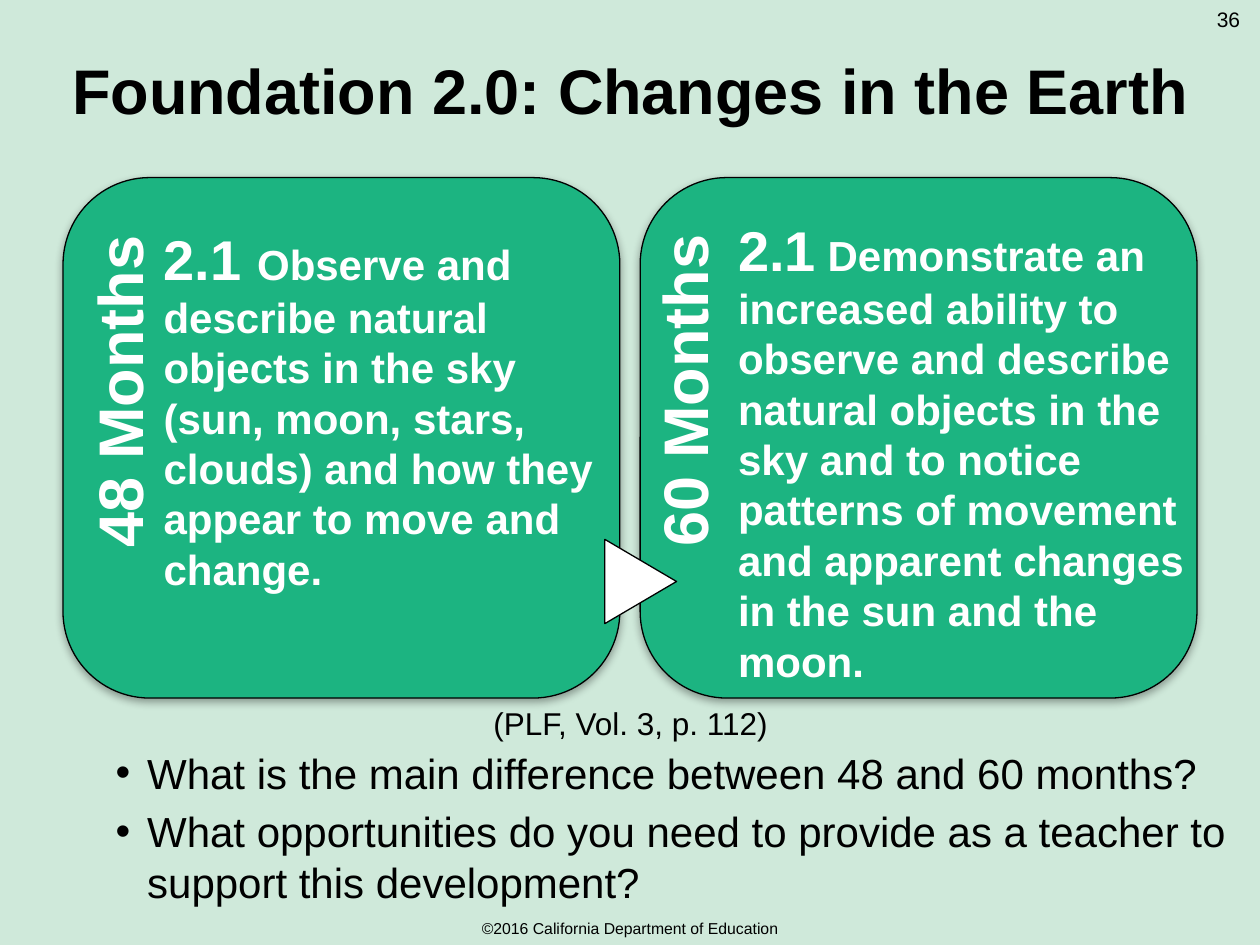
from lxml import etree
from pptx import Presentation
from pptx.dml.color import RGBColor
from pptx.enum.shapes import MSO_SHAPE
from pptx.enum.text import MSO_ANCHOR, PP_ALIGN
from pptx.oxml.ns import qn
from pptx.util import Pt

LEFT, CENTER, RIGHT = PP_ALIGN.LEFT, PP_ALIGN.CENTER, PP_ALIGN.RIGHT
TOP, MIDDLE, BOTTOM = MSO_ANCHOR.TOP, MSO_ANCHOR.MIDDLE, MSO_ANCHOR.BOTTOM
ROUNDED = MSO_SHAPE.ROUNDED_RECTANGLE
TRIANGLE = MSO_SHAPE.FLOWCHART_EXTRACT
BLACK, WHITE, GREEN, MINT = "000000", "FFFFFF", "1CB481", "CFE9DA"


def color(value):
    return RGBColor.from_string(value)


def set_format(target, values):
    for name, value in values.items():
        setattr(target, name, value)


def add_shape(page, kind, place, fill, rotation=0):
    shape = page.shapes.add_shape(kind, *map(Pt, place))
    shape.rotation = rotation
    shape.shadow.inherit = False
    shape.fill.solid()
    shape.fill.fore_color.rgb = color(fill)
    shape.line.color.rgb = color(BLACK)
    shape.line.width = Pt(0.75)
    return shape


def add_shadow(shape):
    effects = shape._element.spPr.find(qn("a:effectLst"))
    shadow = etree.SubElement(effects, qn("a:outerShdw"), blurRad=str(Pt(5)),
                              dist=str(Pt(1.8)), dir="5400000", rotWithShape="0")
    tint = etree.SubElement(shadow, qn("a:srgbClr"), val=BLACK)
    etree.SubElement(tint, qn("a:alpha"), val="35000")


def set_indent(para, margin, first=0, bullet=None):
    properties = para._p.get_or_add_pPr()
    properties.set("marL", str(Pt(margin)))
    properties.set("indent", str(Pt(first)))
    if bullet:
        etree.SubElement(properties, qn("a:buFont"), typeface="Arial")
        etree.SubElement(properties, qn("a:buChar"), char=bullet)


def add_span(para, text, size, fill=BLACK, bold=False):
    span = para.add_run()
    span.text = text
    set_format(span.font, {"name": "Arial", "size": Pt(size), "bold": bold})
    span.font.color.rgb = color(fill)


def add_box(page, place, spans, align=LEFT, anchor=TOP, rotation=0, **style):
    box = page.shapes.add_textbox(*map(Pt, place))
    box.rotation = rotation
    set_format(box.text_frame, {"word_wrap": True, "vertical_anchor": anchor})
    para = box.text_frame.paragraphs[0]
    para.alignment = align
    for text, size in spans:
        add_span(para, text, size, **style)
    return box


def add_card(page, left, label, label_place, text_place, indent, spans):
    add_shadow(add_shape(page, ROUNDED, (left, 101.5, 318.2, 297.4), GREEN))
    add_box(page, label_place, [(label, 36)], RIGHT, BOTTOM, 270,
            fill=WHITE, bold=True)
    box = add_box(page, text_place, spans, fill=WHITE, bold=True)
    box.text_frame.margin_top = Pt(7)
    set_indent(box.text_frame.paragraphs[0], indent)


def add_questions(page, place, questions):
    frame = add_box(page, place, []).text_frame
    for index, question in enumerate(questions):
        para = frame.add_paragraph() if index else frame.paragraphs[0]
        set_indent(para, 18, -18, "•")
        if index:
            para.space_before = Pt(4.8)
        add_span(para, question, 24)


def main():
    deck = Presentation()
    set_format(deck, {"slide_width": Pt(720), "slide_height": Pt(540)})
    page = deck.slides.add_slide(deck.slide_layouts[6])
    page.background.fill.solid()
    page.background.fill.fore_color.rgb = color(MINT)

    add_box(page, (26.6, 0, 667.4, 102.2),
            [("Foundation 2.0: Changes in the Earth", 36)], CENTER, MIDDLE, bold=True)
    add_card(page, 36, "48 Months", (-39.6, 203, 207.4, 56.9),
             (86.4, 121, 267.8, 241.2), 0,
             [("2.1 ", 32),
              ("Observe and describe natural objects in the sky (sun, moon, stars, "
               "clouds) and how they appear to move and change.", 24)])
    add_card(page, 365.8, "60 Months", (286.6, 205.9, 208, 50.4),
             (378.7, 115.9, 305.3, 256.3), 36,
             [("2.1", 32),
              (" Demonstrate an increased ability to observe and describe natural "
               "objects in the sky and to notice patterns of movement and apparent "
               "changes in the sun and the moon.", 24)])
    add_shape(page, TRIANGLE, (342, 311.8, 48.2, 41), WHITE, 90)

    add_box(page, (230.4, 398.9, 260, 28.8), [("(PLF, Vol. 3, p. 112)", 18)], CENTER)
    add_questions(page, (59, 423.4, 663.1, 95), [
        "What is the main difference between 48 and 60 months?",
        "What opportunities do you need to provide as a teacher to support this development?",
    ])
    add_box(page, (0, 521.3, 720, 18),
            [("©2016 California Department of Education", 9)], CENTER, MIDDLE)
    add_box(page, (684, 0, 36, 28.8), [("36", 12)], CENTER)
    deck.save("out.pptx")


if __name__ == "__main__":
    main()
